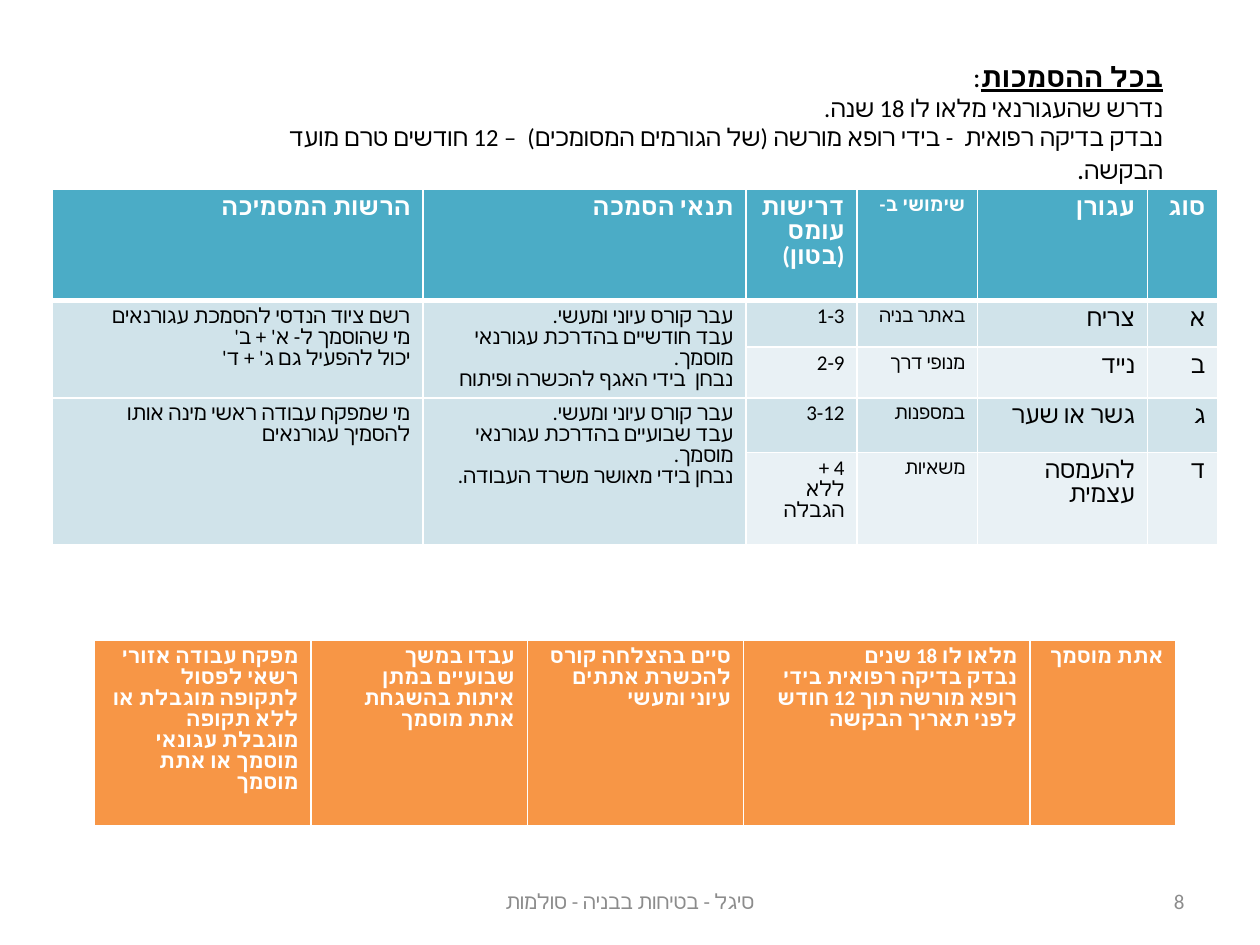
from lxml.etree import SubElement
from pptx import Presentation
from pptx.dml.color import RGBColor
from pptx.enum.text import MSO_ANCHOR as VA, PP_ALIGN as AL
from pptx.oxml.ns import qn
from pptx.util import Cm, Pt

WHITE = RGBColor(0xFF, 0xFF, 0xFF)
BLACK = RGBColor(0, 0, 0)
GRAY = RGBColor(0x8C, 0x8C, 0x8C)
TEAL = RGBColor(0x4B, 0xAC, 0xC6)
BAND_DARK = RGBColor(0xD0, 0xE3, 0xEA)
BAND_LIGHT = RGBColor(0xE9, 0xF1, 0xF5)
ORANGE = RGBColor(0xF7, 0x96, 0x46)


def style_paragraph(p, size, color, align=AL.RIGHT, rtl=True, bold=False):
    p.alignment = align
    if rtl:
        p._p.get_or_add_pPr().set("rtl", "1")
    fmt = {"size": Pt(size), "name": "Calibri", "bold": bold}
    for r in p.runs:
        for key, value in fmt.items():
            setattr(r.font, key, value)
        r.font.color.rgb = color
        SubElement(r.font._element, qn("a:cs"), typeface="Calibri")
    for br in p._p.findall(qn("a:br")):
        SubElement(br, qn("a:rPr"), sz=str(size * 100))


def style_cell(cell, text, size, color, fill, bold, bottom):
    tcPr = cell._tc.get_or_add_tcPr()
    for side, width in {"L": 1, "R": 1, "T": 1, "B": bottom}.items():
        ln = SubElement(tcPr, qn(f"a:ln{side}"), w=str(Pt(width)))
        SubElement(SubElement(ln, qn("a:solidFill")), qn("a:srgbClr"), val=str(WHITE))
    cell.fill.solid()
    cell.fill.fore_color.rgb = fill
    cell.text = text
    for p in cell.text_frame.paragraphs:
        p.line_spacing = 0.82
        style_paragraph(p, size, color, bold=bold)


prs = Presentation()
prs.slide_width, prs.slide_height = Cm(25.4), Cm(19.05)
s = prs.slides.add_slide(prs.slide_layouts[6])

for text, left, width, align in [
    ("סיגל - בטיחות בבניה - סולמות", 8.68, 8.04, AL.CENTER),
    ("8", 18.2, 5.93, AL.RIGHT),
]:
    tf = s.shapes.add_textbox(Cm(left), Cm(17.66), Cm(width), Cm(1.01)).text_frame
    tf.word_wrap = True
    tf.vertical_anchor = VA.MIDDLE
    tf.text = text
    style_paragraph(tf.paragraphs[0], 12, GRAY, align, rtl=False)

CERTIFICATIONS = [
    ["הרשות המסמיכה", "תנאי הסמכה", "דרישות עומס\n(בטון)", "שימושי ב-", "עגורן", "סוג"],
    ["רשם ציוד הנדסי להסמכת עגורנאים\nמי שהוסמך ל- א' + ב' \vיכול להפעיל גם ג' + ד' ",
     "עבר קורס עיוני ומעשי.\nעבד חודשיים בהדרכת עגורנאי מוסמך.\nנבחן  בידי האגף להכשרה ופיתוח ",
     "1-3", "באתר בניה", "צריח", "א"],
    ["", "", "2-9", "מנופי דרך", "נייד", "ב"],
    ["מי שמפקח עבודה ראשי מינה אותו להסמיך עגורנאים ",
     "עבר קורס עיוני ומעשי.\nעבד שבועיים בהדרכת עגורנאי מוסמך.\nנבחן בידי מאושר משרד העבודה.  ",
     "3-12", "במספנות", "גשר או שער", "ג"],
    ["", "", "4 + \vללא הגבלה", "משאיות", "להעמסה עצמית", "ד"],
]
SIGNALLER = [[
    "מפקח עבודה אזורי רשאי לפסול לתקופה מוגבלת או ללא תקופה מוגבלת עגונאי מוסמך או אתת מוסמך",
    "עבדו במשך שבועיים במתן איתות בהשגחת אתת מוסמך",
    "סיים בהצלחה קורס להכשרת אתתים עיוני ומעשי",
    "מלאו לו 18 שנים\nנבדק בדיקה רפואית בידי רופא מורשה תוך 12 חודש לפני תאריך הבקשה",
    "אתת מוסמך",
]]
HEADER_SIZES = [14, 14, 14, 11, 14, 14]
BODY_SIZES = [12, 12, 12, 11, 14, 14]

tables = []
for rows, left, top, widths, heights in [
    (CERTIFICATIONS, 1.06, 3.82, [7.47, 6.51, 2.24, 2.43, 3.42, 1.42], [2.24, 0.94, 1.02, 1.1, 1.86]),
    (SIGNALLER, 1.91, 12.91, [4.36, 4.36, 4.36, 5.77, 2.95], [3.76]),
]:
    t = s.shapes.add_table(len(rows), len(widths), Cm(left), Cm(top),
                           Cm(sum(widths)), Cm(sum(heights))).table
    t.first_row = t.horz_banding = False
    for col, width in zip(t.columns, widths):
        col.width = Cm(width)
    for row, height in zip(t.rows, heights):
        row.height = Cm(height)
    tables.append(t)

certifications, signaller = tables
for i, row in enumerate(CERTIFICATIONS):
    for j, text in enumerate(row):
        cell = certifications.cell(i, j)
        if i == 0:
            style_cell(cell, text, HEADER_SIZES[j], WHITE, TEAL, True, 3)
        else:
            fill = BAND_DARK if i % 2 or j < 2 else BAND_LIGHT
            style_cell(cell, text, BODY_SIZES[j], BLACK, fill, False, 1)
for i in (1, 3):
    for j in (0, 1):
        certifications.cell(i, j).merge(certifications.cell(i + 1, j))
for j, text in enumerate(SIGNALLER[0]):
    style_cell(signaller.cell(0, j), text, 12, WHITE, ORANGE, True, 3)

tf = s.shapes.add_textbox(Cm(3.9), Cm(1.07), Cm(19.8), Cm(2.24)).text_frame
tf.word_wrap = True
for i, (texts, size) in enumerate([
    (["בכל ההסמכות", ":"], 16),
    (["נדרש שהעגורנאי מלאו לו 18 שנה."], 14),
    (["נבדק בדיקה רפואית  - בידי רופא מורשה (של הגורמים המסומכים)  – 12 חודשים טרם מועד הבקשה", "."], 14),
]):
    p = tf.add_paragraph() if i else tf.paragraphs[0]
    for text in texts:
        p.add_run().text = text
    style_paragraph(p, size, BLACK)
heading = tf.paragraphs[0].runs[0].font
for key, value in {"bold": True, "underline": True}.items():
    setattr(heading, key, value)
tf.paragraphs[2].runs[1].font.size = Pt(16)

prs.save("out.pptx")
